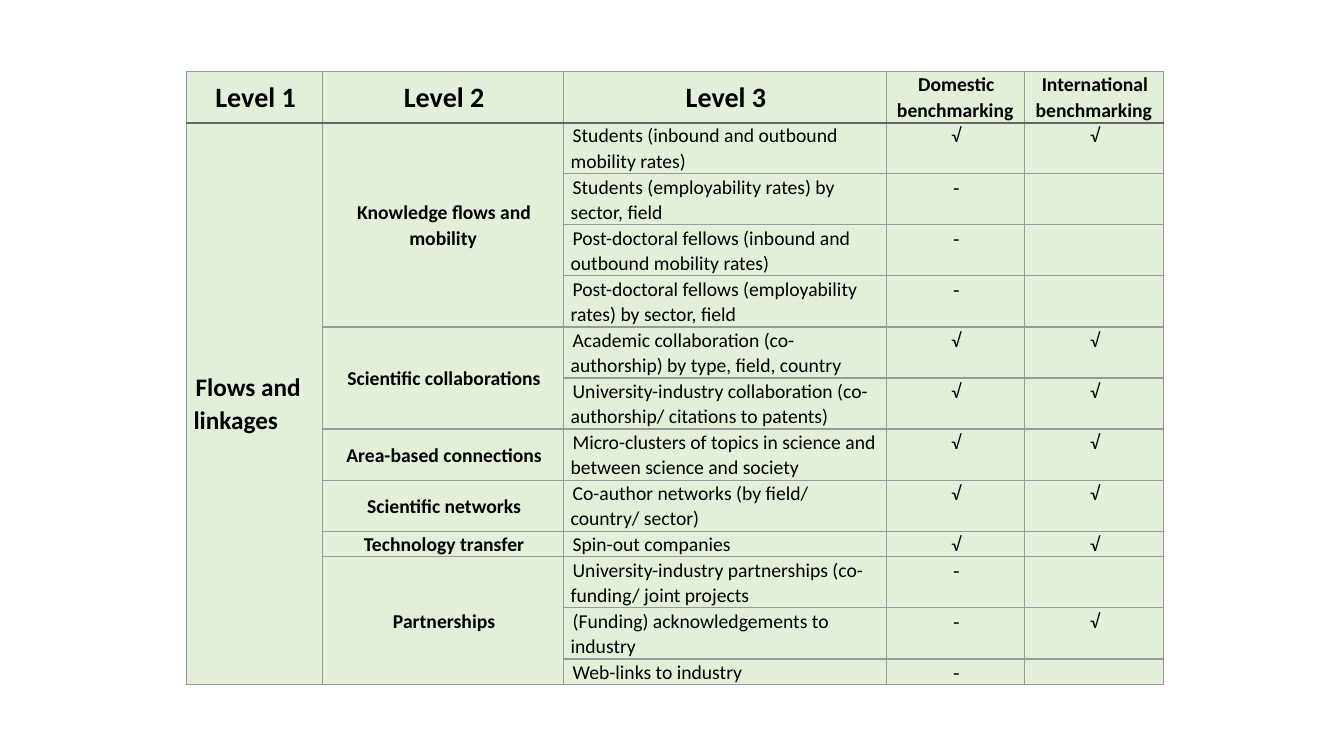
from lxml.etree import SubElement
from pptx import Presentation
from pptx.dml.color import RGBColor
from pptx.enum.text import MSO_ANCHOR, PP_ALIGN
from pptx.oxml.ns import qn
from pptx.util import Inches, Pt

COLORS = {"text": "000000", "fill": "E2EFD9", "grid": "999999", "header_line": "666666"}
COL_WIDTHS = [1.35, 2.39, 3.2, 1.37, 1.38]
ONE_LINE, TWO_LINES = 0.25, 0.5
HEADERS = ["Level 1", "Level 2", "Level 3", "Domestic benchmarking", "International benchmarking"]
LEVEL_1 = "Flows and linkages"
YES, NO = "√", "˗"
# Level 2 -> (level 3, domestic, international)
INDICATORS = {
    "Knowledge flows and mobility": [
        ("Students (inbound and outbound mobility rates)", YES, YES),
        ("Students (employability rates) by sector, field", NO, ""),
        ("Post-doctoral fellows (inbound and outbound mobility rates)", NO, ""),
        ("Post-doctoral fellows (employability rates) by sector, field", NO, ""),
    ],
    "Scientific collaborations": [
        ("Academic collaboration (co-authorship) by type, field, country", YES, YES),
        ("University-industry collaboration (co-authorship/ citations to patents)", YES, YES),
    ],
    "Area-based connections": [
        ("Micro-clusters of topics in science and between science and society", YES, YES),
    ],
    "Scientific networks": [("Co-author networks (by field/ country/ sector)", YES, YES)],
    "Technology transfer": [("Spin-out companies", YES, YES)],
    "Partnerships": [
        ("University-industry partnerships (co-funding/ joint projects", NO, ""),
        ("(Funding) acknowledgements to industry", NO, YES),
        ("Web-links to industry", NO, ""),
    ],
}


def set_border(cell, side, color, width):
    ln = SubElement(cell._tc.get_or_add_tcPr(), qn(f"a:ln{side}"), w=str(Pt(width)))
    SubElement(SubElement(ln, qn("a:solidFill")), qn("a:srgbClr"), val=COLORS[color])


def style_cell(cell, row):
    """Set borders, fill and margins; the line under the header is heavier."""
    heavy_side = {0: "B", 1: "T"}.get(row)
    for side in "LRTB":
        if side == heavy_side:
            set_border(cell, side, "header_line", 1.5)
        else:
            set_border(cell, side, "grid", 1)
    cell.fill.solid()
    cell.fill.fore_color.rgb = RGBColor.from_string(COLORS["fill"])
    cell.margin_left = cell.margin_right = Inches(0.07)
    cell.margin_top = cell.margin_bottom = 0


def write_cell(cell, text, size=14, bold=False, align=PP_ALIGN.CENTER, anchor=MSO_ANCHOR.TOP):
    cell.text = text
    cell.vertical_anchor = anchor
    p = cell.text_frame.paragraphs[0]
    p.alignment = align
    p.line_spacing = 1.07
    p._p.get_or_add_pPr().set("indent", str(Inches(0.02)))
    p.font.name = "Calibri"
    p.font.size = Pt(size)
    p.font.bold = bold
    p.font.color.rgb = RGBColor.from_string(COLORS["text"])


def add_indicator_table(slide, left, top):
    lines = [line for group in INDICATORS.values() for line in group]
    heights = [TWO_LINES] + [ONE_LINE if len(line[0]) < 25 else TWO_LINES for line in lines]
    table = slide.shapes.add_table(
        len(heights), len(COL_WIDTHS), Inches(left), Inches(top),
        Inches(sum(COL_WIDTHS)), Inches(sum(heights))).table
    table.horz_banding = False
    for column, width in zip(table.columns, COL_WIDTHS):
        column.width = Inches(width)
    for i, height in enumerate(heights):
        table.rows[i].height = Inches(height)
        for cell in table.rows[i].cells:
            style_cell(cell, i)
            write_cell(cell, "")

    for col, text in enumerate(HEADERS):
        is_level = col < 3
        write_cell(table.cell(0, col), text, 20 if is_level else 14, True,
                   anchor=MSO_ANCHOR.MIDDLE if is_level else MSO_ANCHOR.TOP)

    table.cell(1, 0).merge(table.cell(len(lines), 0))
    write_cell(table.cell(1, 0), LEVEL_1, 18, True, PP_ALIGN.LEFT, MSO_ANCHOR.MIDDLE)
    row = 1
    for level_2, group in INDICATORS.items():
        if len(group) > 1:
            table.cell(row, 1).merge(table.cell(row + len(group) - 1, 1))
        write_cell(table.cell(row, 1), level_2, bold=True, anchor=MSO_ANCHOR.MIDDLE)
        for level_3, *marks in group:
            write_cell(table.cell(row, 2), level_3, align=PP_ALIGN.LEFT)
            for col, mark in enumerate(marks, start=3):
                write_cell(table.cell(row, col), mark, bold=mark == NO)
            row += 1


def main():
    prs = Presentation()
    prs.slide_width, prs.slide_height = Inches(13.33), Inches(7.5)
    slide = prs.slides.add_slide(prs.slide_layouts[6])
    add_indicator_table(slide, 1.85, 0.71)
    prs.save("out.pptx")


if __name__ == "__main__":
    main()
